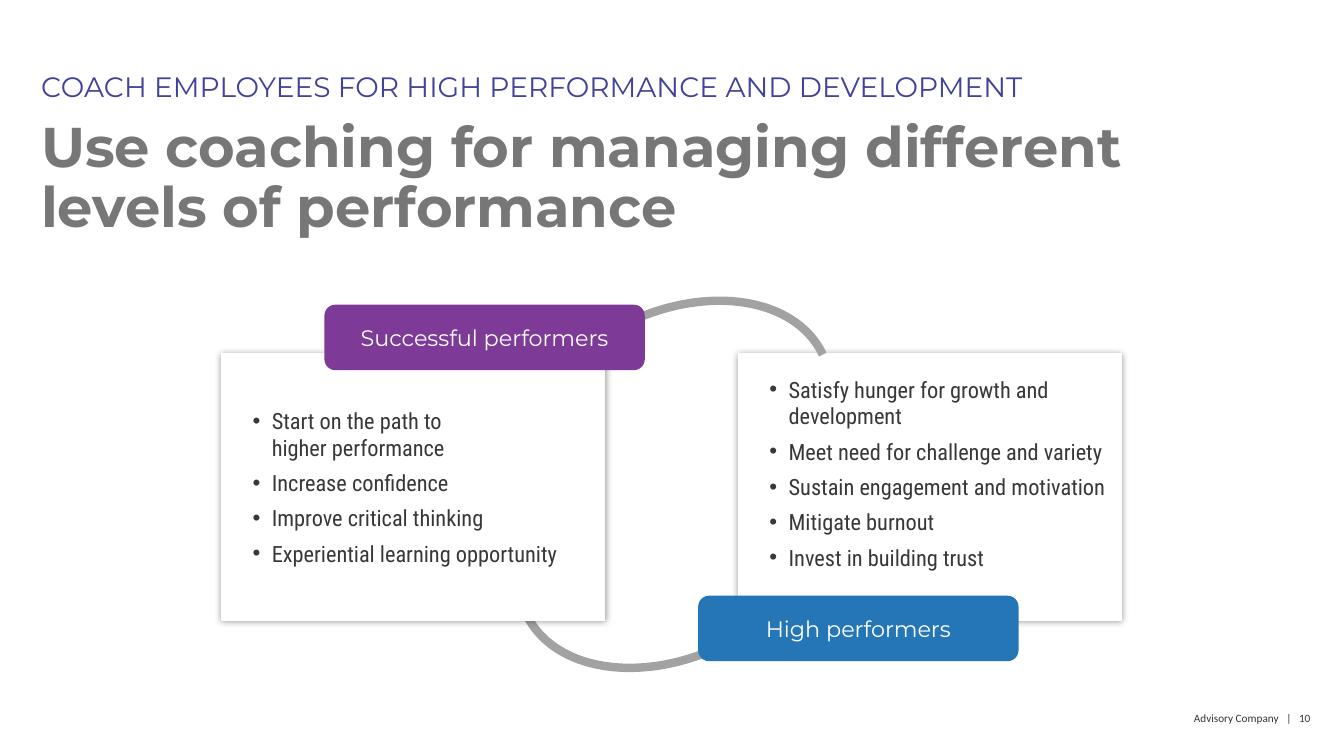
from collections import namedtuple

from lxml import etree
from pptx import Presentation
from pptx.dml.color import RGBColor
from pptx.enum.shapes import MSO_SHAPE
from pptx.enum.text import MSO_ANCHOR, PP_ALIGN
from pptx.oxml.ns import qn
from pptx.util import Inches, Pt

RECT, ROUNDED, ARC = MSO_SHAPE.RECTANGLE, MSO_SHAPE.ROUNDED_RECTANGLE, MSO_SHAPE.ARC
TOP, MIDDLE = MSO_ANCHOR.TOP, MSO_ANCHOR.MIDDLE
LEFT, CENTER, RIGHT = PP_ALIGN.LEFT, PP_ALIGN.CENTER, PP_ALIGN.RIGHT

Box = namedtuple("Box", "left top width height")
PAGE = Box(0, 0, 13.34, 7.5)
HEADING = Box(0.31, 0.68, 12.5, 1.75)
COMPARISON = Box(2.2, 3.51, 8.93, 2.64)
FOOTER = Box(10.74, 7.04, 2.27, 0.2)

CARD_WIDTH = 3.8
LABEL_WIDTH, LABEL_HEIGHT = 3.18, 0.65
LABEL_INSET = 1.02
ARC_WIDTH, ARC_HEIGHT = 2.21, 3.18

SUCCESSFUL = [
    "Start on the path to\vhigher performance",
    "Increase confidence",
    "Improve critical thinking",
    "Experiential learning opportunity",
]
HIGH = [
    "Satisfy hunger for growth and development",
    "Meet need for challenge and variety",
    "Sustain engagement and motivation",
    "Mitigate burnout",
    "Invest in building trust",
]


def color(value):
    return RGBColor.from_string(value)


def emu(box):
    return [Inches(length) for length in box]


def style(paragraph, font_name, size, ink, bold=False, align=LEFT):
    paragraph.alignment = align
    font = paragraph.font
    font.name, font.size, font.bold = font_name, Pt(size), bold
    font.color.rgb = color(ink)


def add_text(slide, box, text, font_name, size, ink, bold=False, align=LEFT,
             spacing=0.9, inset=True):
    frame = slide.shapes.add_textbox(*emu(box)).text_frame
    frame.word_wrap = True
    frame.vertical_anchor = TOP
    if not inset:
        frame.margin_left = frame.margin_right = 0
        frame.margin_top = frame.margin_bottom = 0
    paragraph = frame.paragraphs[0]
    paragraph.text = text
    paragraph.line_spacing = spacing
    style(paragraph, font_name, size, ink, bold, align)


def add_panel(slide, preset, box, fill):
    panel = slide.shapes.add_shape(preset, *emu(box))
    panel.shadow.inherit = False
    panel.fill.solid()
    panel.fill.fore_color.rgb = color(fill)
    panel.line.fill.background()
    panel.text_frame.word_wrap = True
    panel.text_frame.vertical_anchor = MIDDLE
    return panel


def add_glow(panel):
    effects = panel._element.spPr.find(qn("a:effectLst"))
    shadow = etree.SubElement(effects, qn("a:outerShdw"), blurRad=str(Pt(5)),
                              dist="0", dir="0", algn="ctr", rotWithShape="0")
    black = etree.SubElement(shadow, qn("a:srgbClr"), val="000000")
    etree.SubElement(black, qn("a:alpha"), val="40000")


def add_bullet(paragraph):
    properties = paragraph._p.get_or_add_pPr()
    properties.set("marL", str(Inches(0.4)))
    properties.set("indent", str(Inches(-0.19)))
    etree.SubElement(properties, qn("a:buFont"), typeface="Arial")
    etree.SubElement(properties, qn("a:buChar"), char="•")


def add_card(slide, box, points, bottom_margin=0.05):
    card = add_panel(slide, RECT, box, "FFFFFF")
    card.line.color.rgb = color("FFFFFF")
    card.line.width = Pt(1)
    add_glow(card)
    frame = card.text_frame
    frame.margin_bottom = Inches(bottom_margin)
    for index, point in enumerate(points):
        paragraph = frame.add_paragraph() if index else frame.paragraphs[0]
        paragraph.text = point
        paragraph.space_after = Pt(6)
        style(paragraph, "Roboto Condensed", 16, "383838")
        add_bullet(paragraph)


def add_label(slide, left, top, text, fill):
    label = add_panel(slide, ROUNDED, Box(left, top, LABEL_WIDTH, LABEL_HEIGHT), fill)
    paragraph = label.text_frame.paragraphs[0]
    paragraph.text = text
    style(paragraph, "Montserrat", 16, "FFFFFF", align=CENTER)


def add_loop(slide, left, top, rotation):
    loop = slide.shapes.add_shape(ARC, *emu(Box(left, top, ARC_WIDTH, ARC_HEIGHT)))
    loop.shadow.inherit = False
    loop.fill.background()
    loop.line.color.rgb = color("A2A2A2")
    loop.line.width = Pt(6)
    loop.rotation = rotation
    loop._element.spPr.find(qn("a:xfrm")).set("flipV", "1")


def add_heading(slide, box):
    add_text(slide, box._replace(height=0.4),
             "COACH EMPLOYEES FOR HIGH PERFORMANCE AND DEVELOPMENT",
             "Montserrat", 20, "414299")
    add_text(slide, box._replace(top=box.top + 0.45, height=box.height - 0.45),
             "Use coaching for managing different levels of performance",
             "Montserrat", 40, "777777", bold=True)


def add_comparison(slide, box):
    right, bottom = box.left + box.width, box.top + box.height
    successful_card = box._replace(width=CARD_WIDTH)
    high_card = successful_card._replace(left=right - CARD_WIDTH)
    loop_left = box.left + (box.width - ARC_WIDTH) / 2

    add_card(slide, high_card, HIGH, bottom_margin=0.32)
    add_loop(slide, loop_left, box.top + 0.32, 65)
    add_loop(slide, loop_left + 0.06, box.top - 0.91, 245)
    add_card(slide, successful_card, SUCCESSFUL)
    add_label(slide, box.left + LABEL_INSET, box.top - 0.75 * LABEL_HEIGHT,
              "Successful performers", "7D3A96")
    add_label(slide, right - LABEL_INSET - LABEL_WIDTH, bottom - 0.37 * LABEL_HEIGHT,
              "High performers", "2576B7")


def add_footer(slide, box):
    add_text(slide, box, "Advisory Company   |   10", "Calibri", 8, "333333",
             align=RIGHT, spacing=1.1, inset=False)


def main():
    deck = Presentation()
    deck.slide_width, deck.slide_height = Inches(PAGE.width), Inches(PAGE.height)
    slide = deck.slides.add_slide(deck.slide_layouts[6])
    add_footer(slide, FOOTER)
    add_heading(slide, HEADING)
    add_comparison(slide, COMPARISON)
    deck.save("out.pptx")


if __name__ == "__main__":
    main()
